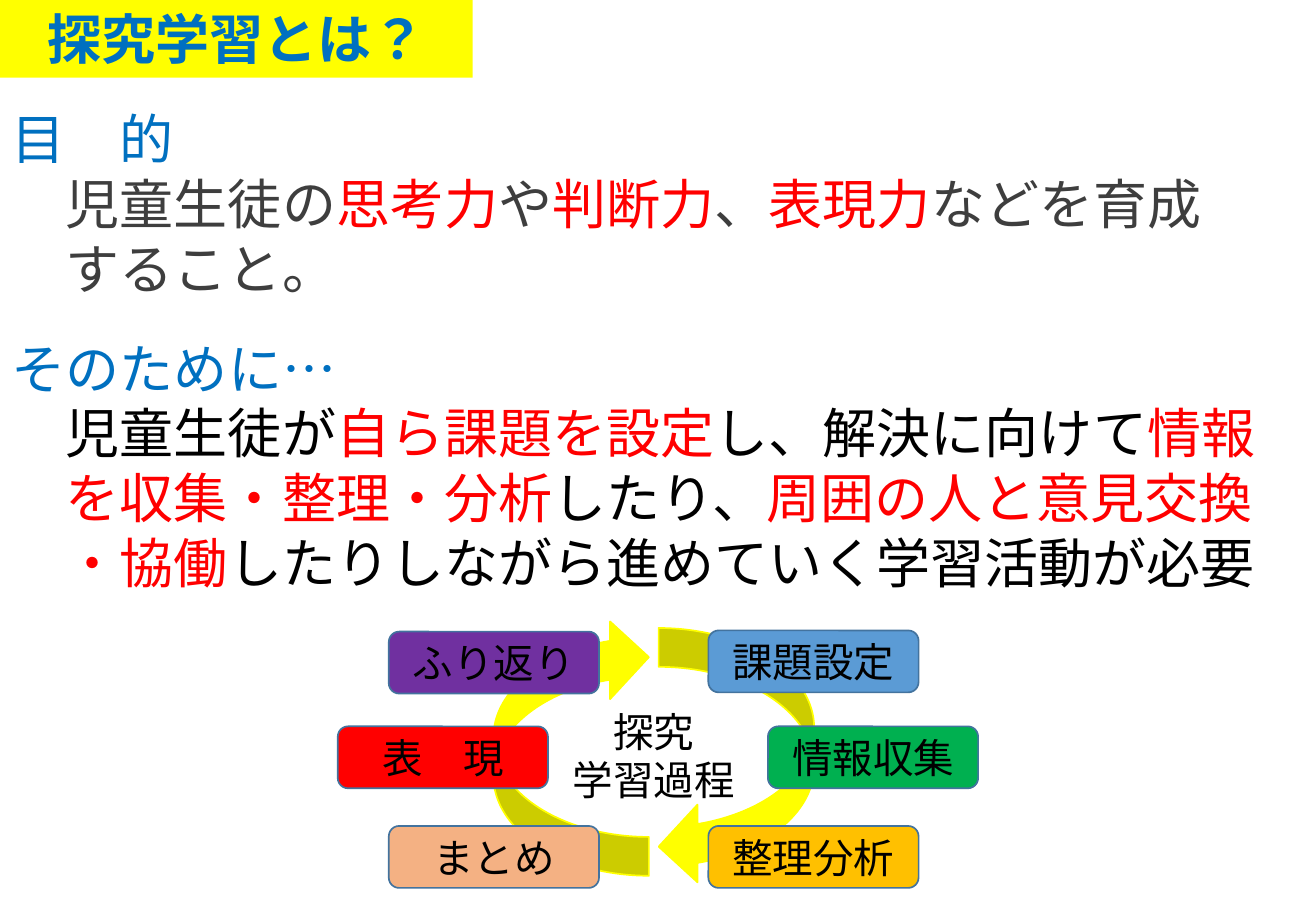
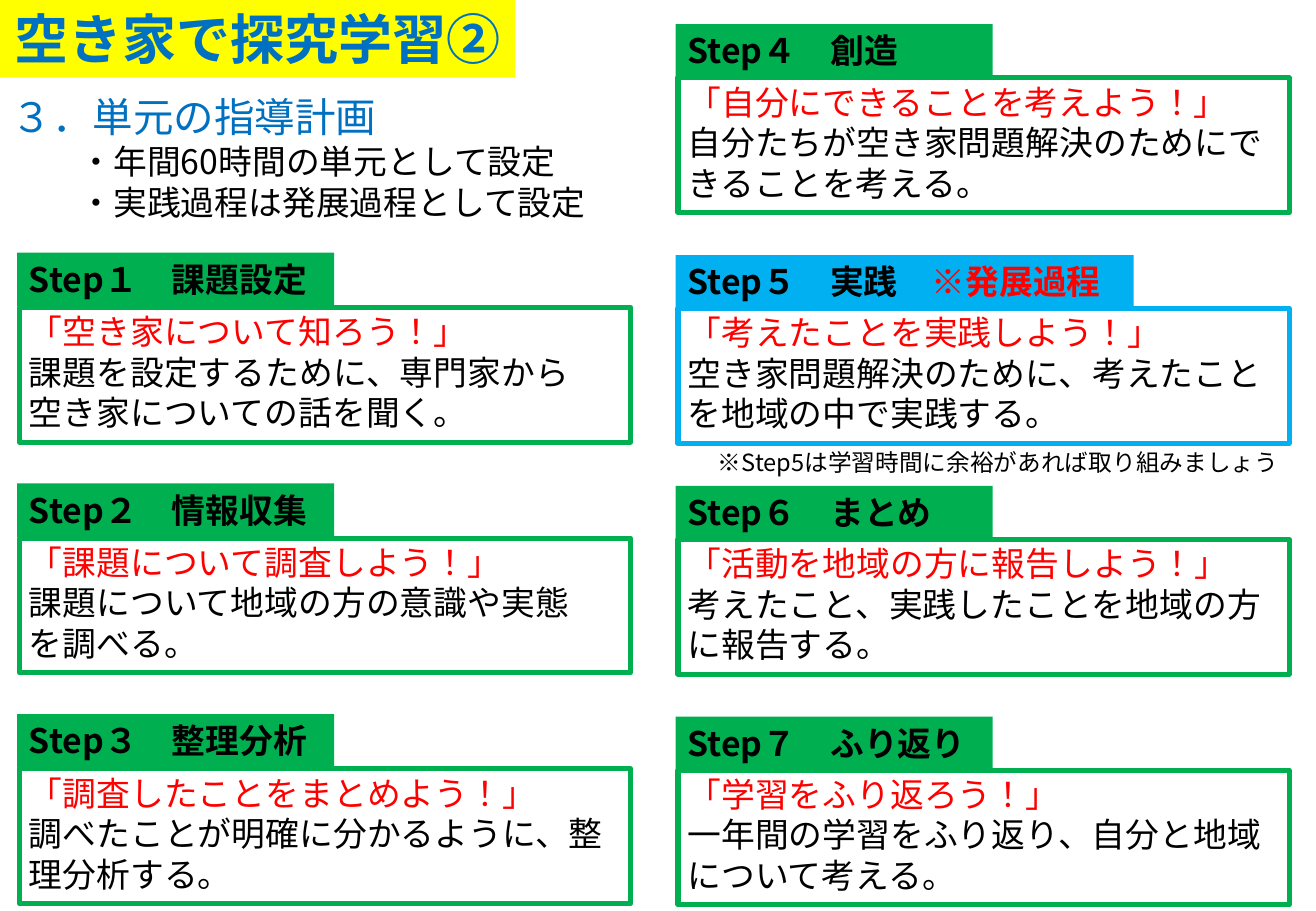
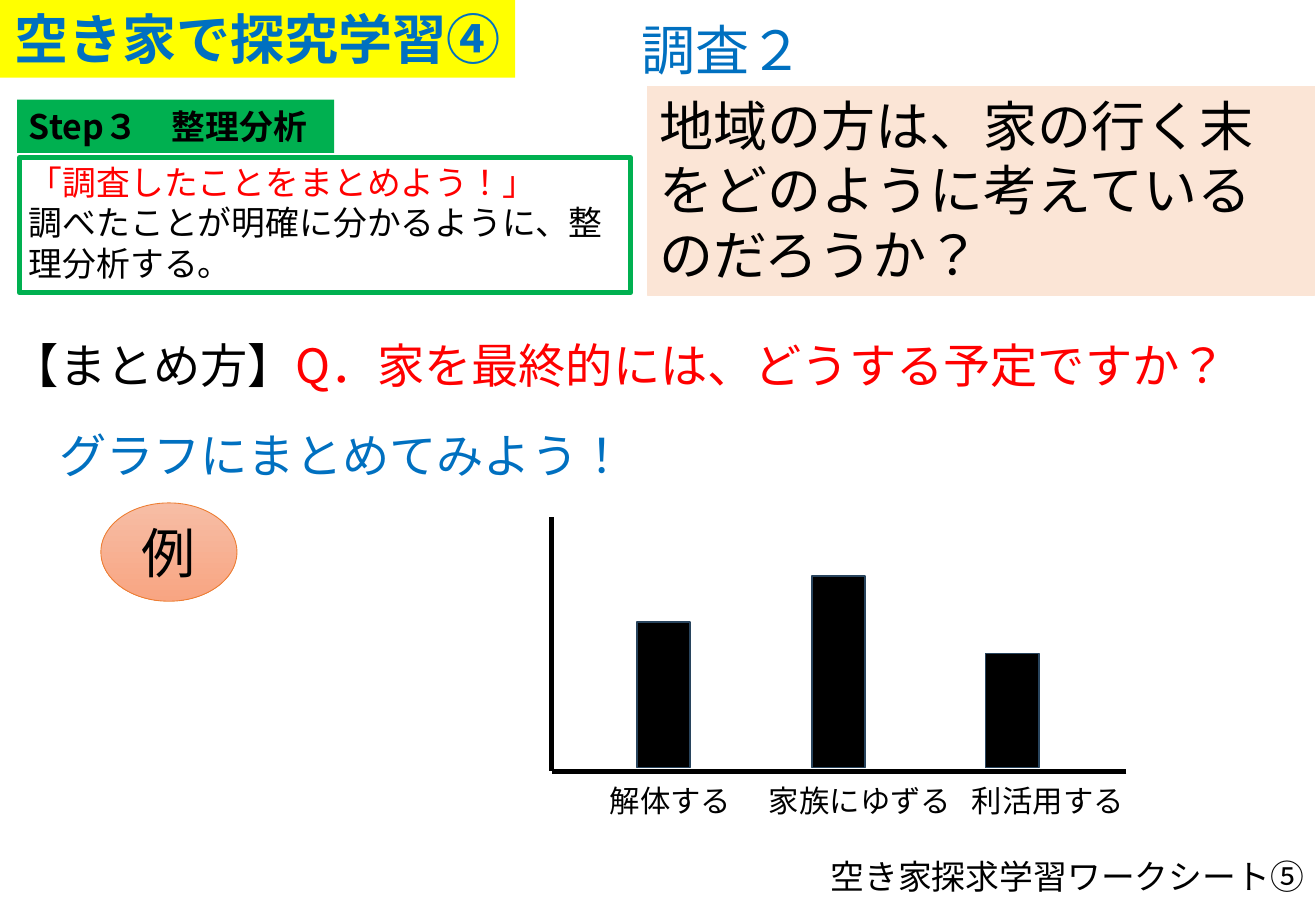
"""Build three slides on inquiry-based learning."""
from dataclasses import dataclass
from typing import NamedTuple

from lxml import etree
from pptx import Presentation
from pptx.dml.color import RGBColor
from pptx.enum.lang import MSO_LANGUAGE_ID
from pptx.enum.shapes import MSO_CONNECTOR, MSO_SHAPE
from pptx.enum.text import MSO_ANCHOR, PP_ALIGN
from pptx.oxml.ns import qn
from pptx.util import Inches, Pt

RECT, ROUND, OVAL = MSO_SHAPE.RECTANGLE, MSO_SHAPE.ROUNDED_RECTANGLE, MSO_SHAPE.OVAL
CURVED_ARROW = MSO_SHAPE.CURVED_LEFT_ARROW
STRAIGHT = MSO_CONNECTOR.STRAIGHT
LEFT, CENTER, RIGHT = PP_ALIGN.LEFT, PP_ALIGN.CENTER, PP_ALIGN.RIGHT
TOP, MIDDLE = MSO_ANCHOR.TOP, MSO_ANCHOR.MIDDLE
JAPANESE = MSO_LANGUAGE_ID.JAPANESE

FONT = "Noto Sans CJK JP"
FOOTER_FONT = "Calibri"
LINE_HEIGHT = 1.2

BLACK = RGBColor(0x00, 0x00, 0x00)
GRAY = RGBColor(0x3E, 0x3E, 0x3E)
RED = RGBColor(0xFF, 0x00, 0x00)
BLUE = RGBColor(0x00, 0x70, 0xC0)
YELLOW = RGBColor(0xFF, 0xFF, 0x00)
GREEN = RGBColor(0x00, 0xB0, 0x50)
CYAN = RGBColor(0x00, 0xB0, 0xF0)
SKY = RGBColor(0x5B, 0x9B, 0xD5)
GOLD = RGBColor(0xFF, 0xC0, 0x00)
PEACH = RGBColor(0xF4, 0xB1, 0x83)
PURPLE = RGBColor(0x70, 0x30, 0xA0)
CREAM = RGBColor(0xFB, 0xE5, 0xD6)
STEEL = RGBColor(0x43, 0x73, 0x9E)
NAVY = RGBColor(0x28, 0x44, 0x5D)
ORANGE = RGBColor(0xED, 0x7D, 0x31)
SALMON_LIGHT = RGBColor(0xF7, 0xBD, 0xA5)
SALMON_DARK = RGBColor(0xF8, 0xA5, 0x82)

SLIDE_W, SLIDE_H = 10.83, 7.5


class Box(NamedTuple):
    """Left, top, width and height in inches."""
    x: float
    y: float
    w: float
    h: float


class Run(NamedTuple):
    """Text in one colour."""
    text: str
    color: RGBColor = BLACK


class Outline(NamedTuple):
    """Colour and width in points of a shape's line."""
    color: RGBColor
    width: float


@dataclass(frozen=True)
class Par:
    """Paragraph of runs with one size; the indent counts characters."""
    runs: tuple[Run, ...]
    size: float
    align: PP_ALIGN = LEFT
    indent: int = 0
    bold: bool = False
    font: str = FONT


@dataclass(frozen=True)
class Step:
    """Learning step with a heading, a slogan and a description."""
    heading: str
    slogan: str
    lines: tuple[str, ...]
    color: RGBColor = GREEN
    tab_w: float = 2.61
    remark: str = ""


class Stage(NamedTuple):
    """Stage of the learning cycle."""
    name: str
    x: float
    y: float
    color: RGBColor


class Bar(NamedTuple):
    """Bar of the sample graph and its label."""
    label: str
    x: float
    h: float
    label_x: float
    label_w: float


ANALYSIS = Step("Step３　整理分析", "「調査したことをまとめよう！」",
                ("調べたことが明確に分かるように、整理分析する。",))
LEFT_STEPS = (
    Step("Step１　課題設定", "「空き家について知ろう！」",
         ("課題を設定するために、専門家から", "空き家についての話を聞く。")),
    Step("Step２　情報収集", "「課題について調査しよう！」",
         ("課題について地域の方の意識や実態", "を調べる。")),
    ANALYSIS,
)
RIGHT_STEPS = (
    Step("Step４　創造", "「自分にできることを考えよう！」",
         ("自分たちが空き家問題解決のためにできることを考える。",)),
    Step("Step５　実践　", "「考えたことを実践しよう！」",
         ("空き家問題解決のために、考えたことを地域の中で実践する。",),
         CYAN, 3.77, "※発展過程"),
    Step("Step６　まとめ", "「活動を地域の方に報告しよう！」",
         ("考えたこと、実践したことを地域の方に報告する。",)),
    Step("Step７　ふり返り", "「学習をふり返ろう！」",
         ("一年間の学習をふり返り、自分と地域について考える。",)),
)
STEP_PITCH = 1.9
STAGES = (
    Stage("課題設定", 5.83, 5.19, SKY),
    Stage("情報収集", 6.32, 5.98, GREEN),
    Stage("整理分析", 5.83, 6.8, GOLD),
    Stage("まとめ", 3.2, 6.8, PEACH),
    Stage("表　現", 2.78, 5.98, RED),
    Stage("ふり返り", 3.2, 5.2, PURPLE),
)
BARS = (
    Bar("解体する", 5.24, 1.2, 4.92, 2.32),
    Bar("家族にゆずる", 6.68, 1.58, 6.23, 2.32),
    Bar("利活用する", 8.11, 0.94, 7.9, 1.74),
)
BAR_W, BAR_BOTTOM = 0.44, 6.32


def line(text: str, size: float, color: RGBColor = BLACK, **fmt) -> Par:
    """Return a paragraph with a single run."""
    return Par((Run(text, color),), size, **fmt)


def place(box: Box) -> tuple[int, ...]:
    """Convert a box to lengths."""
    return tuple(Inches(v) for v in box)


def write(tf, pars: tuple[Par, ...], anchor: MSO_ANCHOR = TOP) -> None:
    """Fill a text frame with paragraphs."""
    tf.word_wrap = True
    tf.vertical_anchor = anchor
    for i, par in enumerate(pars):
        p = tf.add_paragraph() if i else tf.paragraphs[0]
        p.alignment = par.align
        p.line_spacing = Pt(par.size * LINE_HEIGHT)
        if par.indent:
            p._p.get_or_add_pPr().set("marL", str(Pt(par.size * par.indent)))
        fmt = {"size": Pt(par.size), "bold": par.bold, "name": par.font,
               "language_id": JAPANESE}
        for run in par.runs:
            r = p.add_run()
            r.text = run.text
            for key, value in fmt.items():
                setattr(r.font, key, value)
            r.font.color.rgb = run.color
            etree.SubElement(r._r.get_or_add_rPr(), qn("a:ea"), typeface=FONT)


def add_text(s, box: Box, *pars: Par) -> None:
    """Add a text box."""
    write(s.shapes.add_textbox(*place(box)).text_frame, pars)


def add_box(s, box: Box, *pars: Par, kind: MSO_SHAPE = RECT,
            fill: RGBColor | None = None, outline: Outline | None = None,
            anchor: MSO_ANCHOR = TOP):
    """Add a preset shape with optional fill, line and text."""
    sp = s.shapes.add_shape(kind, *place(box))
    sp.shadow.inherit = False
    if fill is None:
        sp.fill.background()
    else:
        sp.fill.solid()
        sp.fill.fore_color.rgb = fill
    if outline is None:
        sp.line.fill.background()
    else:
        sp.line.color.rgb = outline.color
        sp.line.width = Pt(outline.width)
    if pars:
        write(sp.text_frame, pars, anchor)
    return sp


def add_axis(s, x1: float, y1: float, x2: float, y2: float) -> None:
    """Add a thick black graph axis."""
    cxn = s.shapes.add_connector(STRAIGHT, *place(Box(x1, y1, x2, y2)))
    cxn.line.color.rgb = BLACK
    cxn.line.width = Pt(3)
    etree.SubElement(cxn._element.spPr, qn("a:effectLst"))


def add_title(s, text: str, width: float = 4.24) -> None:
    """Add the yellow title band."""
    add_box(s, Box(0, 0, width, 0.64),
            line(text, 32, BLUE, align=CENTER, bold=True), fill=YELLOW)


def add_step(s, step: Step, x: float, y: float, gap: float) -> None:
    """Add a step's coloured tab, framed slogan and description."""
    runs = (Run(step.heading),)
    if step.remark:
        runs += (Run(step.remark, RED),)
    add_box(s, Box(x, y, step.tab_w, 0.44), Par(runs, 20, bold=True), fill=step.color)
    add_box(s, Box(x + 0.02, y + gap + 0.02, 5.03, 1.11), outline=Outline(step.color, 3))
    add_text(s, Box(x, y + gap, 5.04, 1.11), line(step.slogan, 20, RED),
             *(line(text, 20) for text in step.lines))


def build_overview(s) -> None:
    """Explain the purpose and the learning cycle."""
    for x, y, angle in ((5.42, 5.17, 0), (4.06, 5.09, 180)):
        arrow = add_box(s, Box(x, y, 1.28, 2.12), kind=CURVED_ARROW,
                        fill=YELLOW, outline=Outline(YELLOW, 1))
        arrow.rotation = angle
    add_title(s, "探究学習とは？", 3.89)
    add_text(
        s, Box(0, 0.82, SLIDE_W, 1.72),
        line("目　的", 32, BLUE),
        Par((Run("児童生徒の", GRAY), Run("思考力", RED), Run("や", GRAY),
             Run("判断力", RED), Run("、", GRAY), Run("表現力", RED),
             Run("などを育成", GRAY)), 32, indent=1),
        line("すること。", 32, GRAY, indent=1))
    add_text(
        s, Box(0, 2.71, SLIDE_W, 2.26),
        line("そのために…", 32, BLUE),
        Par((Run("児童生徒が"), Run("自ら課題を設定", RED),
             Run("し、解決に向けて"), Run("情報", RED)), 32, indent=1),
        Par((Run("を収集・整理・分析", RED), Run("したり、"),
             Run("周囲の人と意見交換", RED)), 32, indent=1),
        Par((Run("・協働", RED), Run("したりしながら進めていく学習活動が必要")),
            32, indent=1))
    for stage in STAGES:
        add_box(s, Box(stage.x, stage.y, 1.73, 0.51),
                line(stage.name, 24, align=CENTER), kind=ROUND,
                fill=stage.color, outline=Outline(STEEL, 1), anchor=MIDDLE)
    add_text(s, Box(4.51, 5.77, 1.74, 0.91),
             *(line(text, 24, align=CENTER) for text in ("探究", "学習過程")))


def build_plan(s) -> None:
    """Lay out the seven steps of the unit plan."""
    add_title(s, "空き家で探究学習②")
    add_text(s, Box(0, 0.71, 5.46, 1.18),
             line("３．単元の指導計画", 24, BLUE),
             line("・年間60時間の単元として設定", 20, indent=2),
             line("・実践過程は発展過程として設定", 20, indent=2))
    for steps, x, top, gap in ((LEFT_STEPS, 0.14, 2.08, 0.43),
                               (RIGHT_STEPS, 5.56, 0.2, 0.42)):
        for i, step in enumerate(steps):
            add_step(s, step, x, top + i * STEP_PITCH, gap)
    add_text(s, Box(5.81, 3.64, 4.87, 0.34),
             line("※Step5は学習時間に余裕があれば取り組みましょう", 14))


def build_analysis(s) -> None:
    """Show how to sum up a survey in a graph."""
    add_title(s, "空き家で探究学習④")
    add_step(s, ANALYSIS, 0.14, 0.82, 0.46)
    add_text(s, Box(0, 2.72, SLIDE_W, 0.57),
             Par((Run("【まとめ方】"),
                  Run("Q．家を最終的には、どうする予定ですか？", RED)), 28))
    add_text(s, Box(5.18, 0.09, 5.63, 0.64), line("調査２", 32, BLUE))
    add_box(s, Box(5.33, 0.71, 5.49, 1.72),
            line("地域の方は、家の行く末をどのように考えているのだろうか？", 32),
            fill=CREAM, outline=Outline(CREAM, 0.75))
    add_text(s, Box(0, 3.46, SLIDE_W, 0.57),
             line("グラフにまとめてみよう！", 28, BLUE, indent=1))
    badge = add_box(s, Box(0.83, 4.14, 1.12, 0.81), line("例", 32, align=CENTER),
                    kind=OVAL, outline=Outline(ORANGE, 0.5), anchor=MIDDLE)
    badge.fill.gradient()
    badge.fill.gradient_angle = 270
    for stop, color in zip(badge.fill.gradient_stops, (SALMON_LIGHT, SALMON_DARK)):
        stop.color.rgb = color
    add_axis(s, 4.54, 4.26, 4.54, 6.35)
    add_axis(s, 9.27, 6.35, 4.54, 6.35)
    for bar in BARS:
        add_box(s, Box(bar.x, BAR_BOTTOM - bar.h, BAR_W, bar.h),
                fill=BLACK, outline=Outline(NAVY, 1))
        add_text(s, Box(bar.label_x, 6.39, bar.label_w, 0.4), line(bar.label, 18))
    add_text(s, Box(6.71, 7, 4.12, 0.44),
             line("空き家探求学習ワークシート⑤", 20, align=RIGHT, font=FOOTER_FONT))


def main() -> None:
    """Build and save the presentation."""
    prs = Presentation()
    prs.slide_width, prs.slide_height = Inches(SLIDE_W), Inches(SLIDE_H)
    for build in (build_overview, build_plan, build_analysis):
        build(prs.slides.add_slide(prs.slide_layouts[6]))
    prs.save("out.pptx")


if __name__ == "__main__":
    main()
